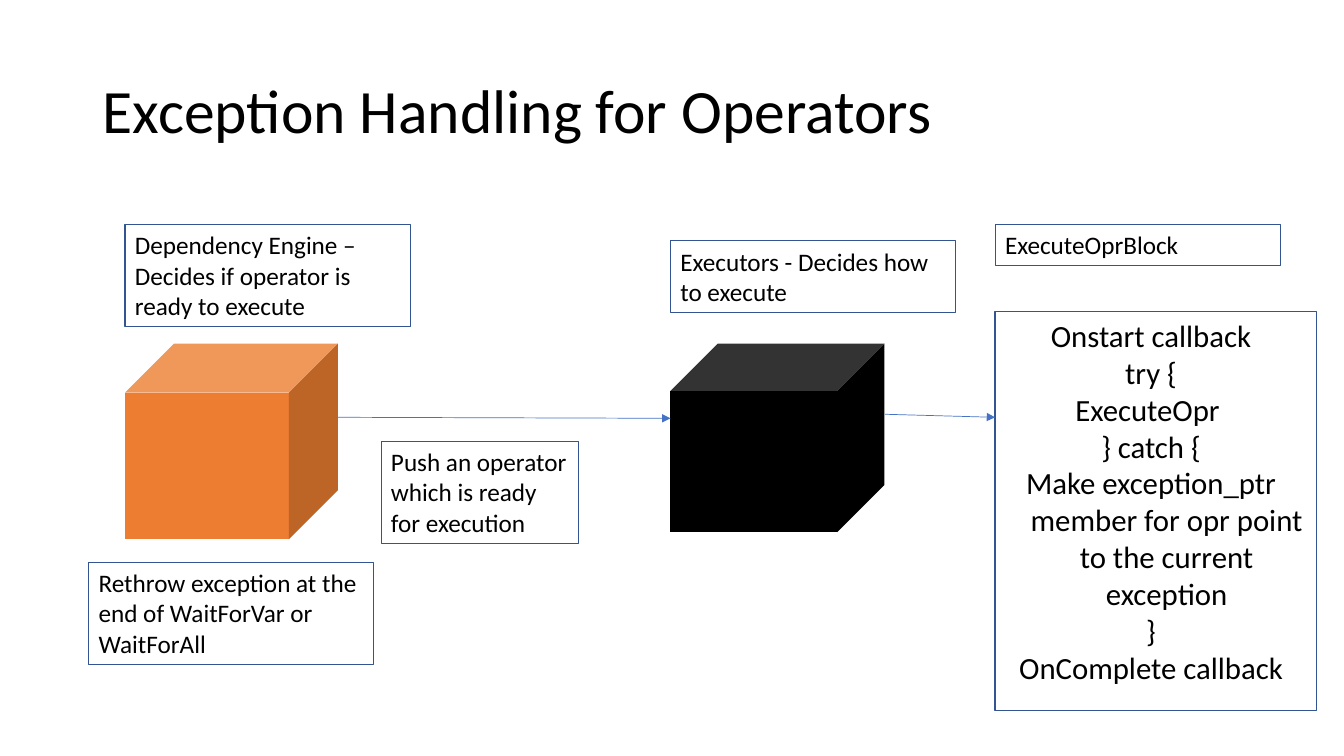
from lxml import etree
from pptx import Presentation
from pptx.dml.color import RGBColor
from pptx.enum import shapes, text
from pptx.oxml import ns
from pptx.util import Inches, Pt

BLACK, WHITE = "000000", "FFFFFF"
ORANGE, BLUE, DARK_BLUE = "ED7D31", "4472C4", "325491"


def color(hex_code):
    return RGBColor.from_string(hex_code)


def write(box, lines, size):
    """Fill a box with one black Calibri paragraph per line."""
    frame = box.text_frame
    frame.word_wrap = True
    frame.text = "\n".join(lines)
    for para in frame.paragraphs:
        para.alignment = text.PP_ALIGN.LEFT
        for span in para.runs:
            span.font.name = "Calibri"
            span.font.size = Pt(size)
            span.font.color.rgb = color(BLACK)
    return frame


deck = Presentation()
deck.slide_width, deck.slide_height = Inches(13.33), Inches(7.5)
page = deck.slides.add_slide(deck.slide_layouts[6])

title = page.shapes.add_textbox(Inches(0.92), Inches(0.4), Inches(11.5), Inches(1.45))
title_frame = write(title, ["Exception Handling for Operators"], 44)
title_frame.vertical_anchor = text.MSO_ANCHOR.MIDDLE
title_frame.paragraphs[0].line_spacing = 0.9

# Executors and dependency engine
cubes = [(6.65, 2.12, 1.87, BLACK), (1.24, 2.11, 1.94, ORANGE)]
for left, width, height, fill in cubes:
    cube = page.shapes.add_shape(
        shapes.MSO_SHAPE.CUBE, Inches(left), Inches(3.41), Inches(width), Inches(height))
    cube.shadow.inherit = False
    cube.fill.solid()
    cube.fill.fore_color.rgb = color(fill)
    cube.line.fill.background()

# Captions around the cubes
captions = [
    (3.78, 4.38, 1.96, 1.01, "Push an operator which is ready for execution"),
    (1.24, 2.23, 2.83, 1.01, "Dependency Engine – Decides if operator is ready to execute"),
    (6.65, 2.39, 2.83, 0.71, "Executors - Decides how to execute"),
    (9.87, 2.23, 2.83, 0.4, "ExecuteOprBlock"),
    (0.88, 5.58, 2.83, 1.01, "Rethrow exception at the end of WaitForVar or WaitForAll"),
]
for left, top, width, height, words in captions:
    caption = page.shapes.add_textbox(
        Inches(left), Inches(top), Inches(width), Inches(height))
    caption.line.color.rgb = color(DARK_BLUE)
    caption.line.width = Pt(0.75)
    frame = write(caption, [words], 18)
    frame.auto_size = text.MSO_AUTO_SIZE.SHAPE_TO_FIT_TEXT

# Steps run by the operator block
steps = [
    "Onstart callback",
    "try {",
    "ExecuteOpr ",
    "} catch {",
    "Make exception_ptr member for opr point to the current exception",
    "}",
    "OnComplete callback",
]
block = page.shapes.add_shape(
    shapes.MSO_SHAPE.RECTANGLE, Inches(9.87), Inches(3.09), Inches(3.19), Inches(3.96))
block.shadow.inherit = False
block.fill.solid()
block.fill.fore_color.rgb = color(WHITE)
block.line.color.rgb = color(DARK_BLUE)
block.line.width = Pt(1)
block_frame = write(block, steps, 22)
block_frame.vertical_anchor = text.MSO_ANCHOR.TOP
block_frame.margin_left = 0
for para in block_frame.paragraphs:
    para.alignment = text.PP_ALIGN.CENTER
    indents = para._p.get_or_add_pPr()
    indents.set("marL", str(Inches(0.31)))
    indents.set("indent", str(Inches(-0.31)))

# Arrows from engine to executors to block
for x1, y1, x2, y2 in [(3.35, 4.14, 6.65, 4.15), (8.78, 4.11, 9.87, 4.14)]:
    arrow = page.shapes.add_connector(
        shapes.MSO_CONNECTOR.STRAIGHT, Inches(x1), Inches(y1), Inches(x2), Inches(y2))
    arrow.line.color.rgb = color(BLUE)
    arrow.line.width = Pt(0.5)
    etree.SubElement(arrow.line._get_or_add_ln(), ns.qn("a:tailEnd"), type="triangle")
    etree.SubElement(arrow._element.spPr, ns.qn("a:effectLst"))

deck.save("out.pptx")
